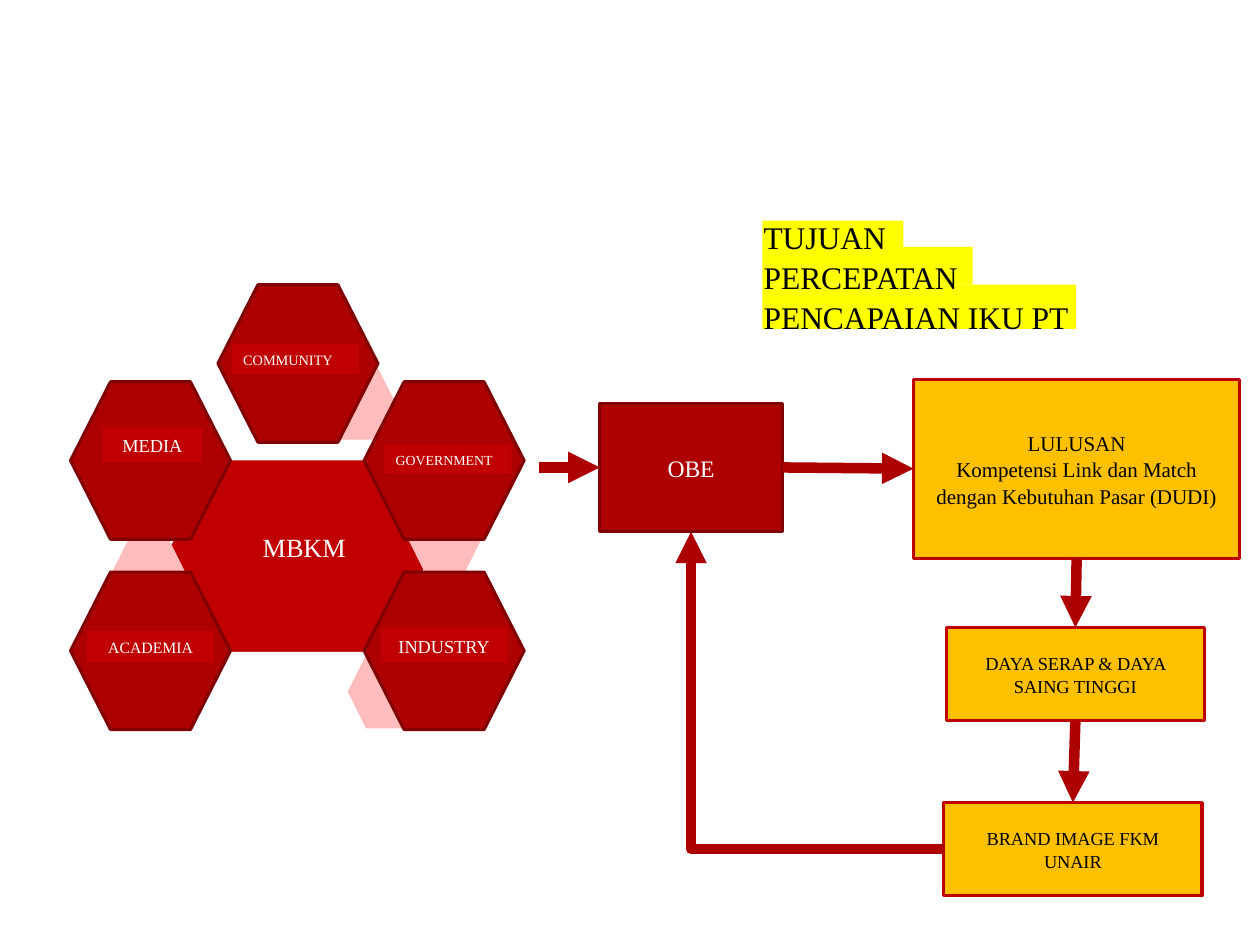
import lxml.etree
import pptx
import pptx.dml.color
import pptx.enum.shapes
import pptx.enum.text
import pptx.oxml.ns
import pptx.util

COLORS = {
    "red": "C00000", "dark_red": "AD0101", "edge": "800101", "pink": "FFBCBC",
    "gold": "FFC000", "yellow": "FFFF00", "white": "FFFFFF", "black": "000000",
}
FONT = "Times New Roman"
COLUMNS, ROWS = 100, 75
CELL = pptx.util.Inches(0.1)
TOP, LEFT, BOTTOM, RIGHT = range(4)
ALIGN = pptx.enum.text.PP_ALIGN
SHAPE = pptx.enum.shapes.MSO_SHAPE
CONNECTOR = pptx.enum.shapes.MSO_CONNECTOR


def cells(*values):
    """Turn grid cells into lengths."""
    return [pptx.util.Emu(round(value * CELL)) for value in values]


def inside(region, part):
    """Move a part's box from region coordinates to slide coordinates."""
    return (region[0] + part[0], region[1] + part[1], *part[2:])


def rgb(name):
    return pptx.dml.color.RGBColor.from_string(COLORS[name])


def paint(shape, fill, line=None, width=1.75):
    shape.shadow.inherit = False
    shape.fill.solid()
    shape.fill.fore_color.rgb = rgb(fill)
    if line:
        shape.line.color.rgb = rgb(line)
        shape.line.width = pptx.util.Pt(width)
    else:
        shape.line.fill.background()


def write(shape, text, size, color, align=ALIGN.CENTER, margin=1):
    frame = shape.text_frame
    frame.text = text
    frame.word_wrap = True
    frame.auto_size = pptx.enum.text.MSO_AUTO_SIZE.NONE
    frame.vertical_anchor = pptx.enum.text.MSO_ANCHOR.MIDDLE
    frame.margin_left, frame.margin_right = cells(margin, margin)
    frame.margin_top = frame.margin_bottom = 0
    for paragraph in frame.paragraphs:
        paragraph.alignment = align
        paragraph.line_spacing = 1.05
        paragraph.space_before = pptx.util.Pt(0)
        for run in paragraph.runs:
            run.font.name = FONT
            run.font.size = pptx.util.Pt(size)
            run.font.color.rgb = rgb(color)


def add_rectangle(slide, box, fill, line=None):
    shape = slide.shapes.add_shape(SHAPE.RECTANGLE, *cells(*box))
    paint(shape, fill, line)
    return shape


def add_hexagon(slide, box, slant, fill, line=None, width=1.75):
    """Draw a flat-topped hexagon; slant is the corner inset as a share of its width."""
    left, top, box_width, height = box
    right, bottom, middle = left + box_width, top + height, top + height / 2
    inset = box_width * slant
    points = [
        (left + inset, top), (right - inset, top), (right, middle),
        (right - inset, bottom), (left + inset, bottom), (left, middle),
    ]
    corners = [tuple(cells(*point)) for point in points]
    builder = slide.shapes.build_freeform(*corners[0])
    builder.add_line_segments(corners[1:], close=True)
    paint(builder.convert_to_shape(), fill, line, width)


def add_arrow(slide, target, target_side, source=None, source_side=RIGHT,
              start=(0, 0), end=(0, 0), kind=CONNECTOR.STRAIGHT):
    arrow = slide.shapes.add_connector(kind, *cells(*start, *end))
    if source is not None:
        arrow.begin_connect(source, source_side)
    arrow.end_connect(target, target_side)
    arrow.line.color.rgb = rgb("dark_red")
    arrow.line.width = pptx.util.Pt(6)
    namespace = pptx.oxml.ns.qn
    lxml.etree.SubElement(arrow.line._get_or_add_ln(), namespace("a:tailEnd"), type="triangle")
    properties = arrow._element.spPr
    lxml.etree.SubElement(properties, namespace("a:effectLst"))
    if kind == CONNECTOR.ELBOW:
        properties.find(namespace("a:prstGeom")).set("prst", "bentConnector2")


def add_partner_cluster(slide, region):
    add_hexagon(slide, inside(region, (7.5, 13.9, 21.1, 15.3)), 0.18, "red", "white", 0.75)
    for left, top in [(20, 6.5), (26.8, 17.3), (22, 29.4), (3.3, 19.9)]:
        add_hexagon(slide, inside(region, (left, top, 5.8, 5.8)), 0.25, "pink")
    left_column, right_column, upper_row, lower_row = 0, 23.3, 7.7, 22.8
    partners = [
        (11.7, 0), (right_column, upper_row), (right_column, lower_row),
        (left_column, lower_row), (left_column, upper_row),
    ]
    for left, top in partners:
        add_hexagon(slide, inside(region, (left, top, 12.7, 12.5)), 0.25, "dark_red", "edge")
    labels = [
        ("COMMUNITY", (12.8, 4.7, 10.1, 2.4), 8.2, ALIGN.LEFT),
        ("MEDIA", (2.5, 11.3, 8, 2.8), 10.5, ALIGN.CENTER),
        ("GOVERNMENT", (24.9, 12.7, 10.1, 2.3), 7.9, ALIGN.LEFT),
        ("ACADEMIA", (1.3, 27.5, 10.1, 2.5), 9, ALIGN.CENTER),
        ("INDUSTRY", (24.6, 27.2, 10.1, 2.8), 10.5, ALIGN.CENTER),
        ("MBKM", (13.5, 19, 10.1, 3.5), 15, ALIGN.CENTER),
    ]
    for text, box, size, align in labels:
        label = add_rectangle(slide, inside(region, box), "red")
        write(label, text, size, "white", align, margin=0.9)


def add_outcome_flow(slide, region):
    steps = [
        ("OBE", (4.8, 1.9, 14.5, 10.2), 13.5, "dark_red", "edge", "white"),
        ("LULUSAN\nKompetensi Link dan Match dengan Kebutuhan Pasar (DUDI)",
         (29.7, 0, 25.9, 14.2), 12, "gold", "red", "black"),
        ("DAYA SERAP & DAYA SAING TINGGI",
         (32.3, 19.7, 20.5, 7.4), 10.5, "gold", "red", "black"),
        ("BRAND IMAGE FKM UNAIR",
         (32.1, 33.6, 20.5, 7.4), 10.5, "gold", "red", "black"),
    ]
    boxes = []
    for text, box, size, fill, line, color in steps:
        shape = add_rectangle(slide, inside(region, box), fill, line)
        write(shape, text, size, color, margin=1.5)
        boxes.append(shape)
    curriculum, graduates, uptake, reputation = boxes
    add_arrow(slide, curriculum, BOTTOM, reputation, LEFT,
              start=inside(region, (32.1, 37.3)), end=inside(region, (12, 12.1)),
              kind=CONNECTOR.ELBOW)
    add_arrow(slide, reputation, TOP, uptake, BOTTOM)
    add_arrow(slide, uptake, TOP, graduates, BOTTOM)
    add_arrow(slide, graduates, LEFT, curriculum, RIGHT)
    entry = inside(region, (0, 7))
    add_arrow(slide, curriculum, LEFT, start=entry, end=entry)


def add_highlighted_title(slide, region):
    for top, width, height in [(0.8, 11.2, 2.1), (2.9, 16.7, 3), (5.9, 24.9, 3.5)]:
        add_rectangle(slide, inside(region, (0.9, top, width, height)), "yellow")
    title = slide.shapes.title
    title.left, title.top, title.width, title.height = cells(*region)
    write(title, "TUJUAN\nPERCEPATAN\nPENCAPAIAN IKU PT", 18, "black", ALIGN.LEFT)
    slide.shapes._spTree.append(title._element)  # bring in front of the highlights


def main():
    presentation = pptx.Presentation()
    presentation.slide_width, presentation.slide_height = cells(COLUMNS, ROWS)
    slide = presentation.slides.add_slide(presentation.slide_layouts.get_by_name("Title Only"))
    add_outcome_flow(slide, (42.8, 30.1, 55.6, 41))
    add_partner_cluster(slide, (5.6, 22.6, 36, 35.3))
    add_highlighted_title(slide, (59.6, 16.7, 36, 10.4))
    presentation.save("out.pptx")


if __name__ == "__main__":
    main()
